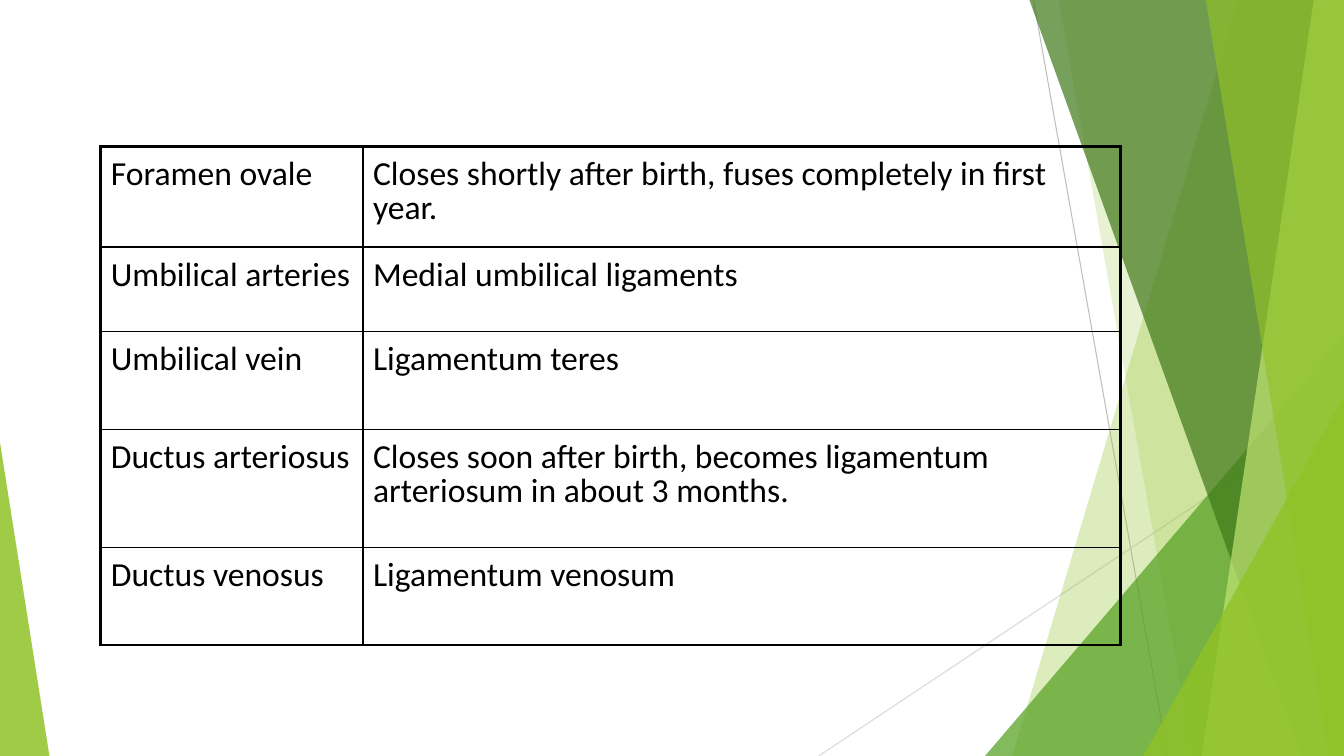
from lxml.etree import SubElement
from pptx import Presentation
from pptx.dml.color import RGBColor
from pptx.enum.shapes import MSO_CONNECTOR, MSO_SHAPE
from pptx.oxml import parse_xml
from pptx.oxml.ns import nsdecls, qn
from pptx.util import Inches, Pt

BLACK = RGBColor(0x00, 0x00, 0x00)
SILVER = RGBColor(0xBF, 0xBF, 0xBF)
PALE_GRAY = RGBColor(0xD9, 0xD9, 0xD9)
LEAF = RGBColor(0x90, 0xC2, 0x26)
GRASS = RGBColor(0x54, 0xA0, 0x21)
FOREST = RGBColor(0x3F, 0x78, 0x19)
LIME = RGBColor(0xC0, 0xE4, 0x74)

SLIDE_WIDTH, SLIDE_HEIGHT = 13.33, 7.5
OUTER_BORDER, INNER_BORDER = 2.21, 0.96

REMNANTS = [
    ("Foramen ovale", "Closes shortly after birth, fuses completely in first year."),
    ("Umbilical arteries", "Medial umbilical ligaments"),
    ("Umbilical vein", "Ligamentum teres"),
    ("Ductus arteriosus",
     "Closes soon after birth, becomes ligamentum arteriosum in about 3 months."),
    ("Ductus venosus", "Ligamentum venosum"),
]
COLUMN_WIDTHS = [2.6, 7.51]
ROW_HEIGHTS = [1, 0.84, 0.97, 1.17, 0.97]


def paint(shape, color, opacity):
    """Give a shape a translucent fill without outline or shadow."""
    shape.shadow.inherit = False
    shape.line.fill.background()
    shape.fill.solid()
    shape.fill.fore_color.rgb = color
    color_element = shape.fill._xPr.find(qn("a:solidFill"))[0]
    SubElement(color_element, qn("a:alpha")).set("val", str(opacity * 1000))


def add_hairline(slide, start, end, color):
    """Draw a thin straight line between two points."""
    points = [Inches(value) for value in (*start, *end)]
    connector = slide.shapes.add_connector(MSO_CONNECTOR.STRAIGHT, *points)
    connector.line.color.rgb = color
    connector.line.width = Pt(0.75)
    SubElement(connector._element.spPr, qn("a:effectLst"))


def add_facet(slide, corners, color, opacity):
    """Draw a translucent polygon through the given corners."""
    points = [(Inches(x), Inches(y)) for x, y in corners]
    builder = slide.shapes.build_freeform(*points[0])
    builder.add_line_segments(points[1:], close=True)
    paint(builder.convert_to_shape(), color, opacity)


def add_wedge(slide, left, top, width, height, apex, color, opacity):
    """Draw a translucent triangle with its apex at a share of its width."""
    shape = slide.shapes.add_shape(
        MSO_SHAPE.ISOSCELES_TRIANGLE,
        Inches(left), Inches(top), Inches(width), Inches(height))
    shape.adjustments[0] = apex
    paint(shape, color, opacity)


def draw_right_facets(slide, left, top, width, height):
    """Layer the lines and green facets against the right edge of the box."""
    right, bottom = left + width, top + height

    def veil(top_offset, bottom_offset, color, opacity):
        """Draw a facet that reaches from its slanted left side to the edge."""
        corners = [(left + top_offset, top), (right, top),
                   (right, bottom), (left + bottom_offset, bottom)]
        add_facet(slide, corners, color, opacity)

    def corner_wedge(wedge_width, wedge_height, color, opacity):
        """Draw a wedge in the lower right corner."""
        add_wedge(slide, right - wedge_width, bottom - wedge_height,
                  wedge_width, wedge_height, 1, color, opacity)

    add_hairline(slide, (left + 2.13, top), (left + 3.46, bottom), SILVER)
    add_hairline(slide, (right, top + 4.03), (left, bottom), PALE_GRAY)
    veil(4.16, 1.92, LEAF, 30)
    veil(2.38, 3.71, LEAF, 20)
    corner_wedge(3.56, 4.17, GRASS, 72)
    veil(2.09, 4.79, FOREST, 70)
    veil(4.91, 3.8, LIME, 70)
    veil(3.84, 5.06, LEAF, 65)
    corner_wedge(1.99, 3.57, LEAF, 80)


def write_text(frame, text, *, size=24, font="Calibri", color=BLACK,
               line_spacing=0.83, space_before=5.6):
    """Write one formatted paragraph into a text frame."""
    paragraph = frame.paragraphs[0]
    paragraph.line_spacing = line_spacing
    paragraph.space_before = Pt(space_before)
    run = paragraph.add_run()
    run.text = text
    run.font.size = Pt(size)
    run.font.name = font
    run.font.color.rgb = color


def set_borders(cell, widths):
    """Set the left, right, top and bottom borders of a cell in points."""
    properties = cell._tc.get_or_add_tcPr()
    for index, (side, width) in enumerate(zip("LRTB", widths)):
        properties.insert(index, parse_xml(
            f'<a:ln{side} {nsdecls("a")} w="{Pt(width)}"><a:solidFill>'
            f'<a:srgbClr val="{BLACK}"/></a:solidFill></a:ln{side}>'))


def draw_remnants_table(slide, left, top, width, height):
    """Fill the box with the table of fetal structures and their remnants."""
    table = slide.shapes.add_table(
        len(REMNANTS), len(COLUMN_WIDTHS),
        Inches(left), Inches(top), Inches(width), Inches(height)).table
    table.first_row = False
    table.horz_banding = False
    for column, column_width in zip(table.columns, COLUMN_WIDTHS):
        column.width = Inches(column_width)
    last_row, last_column = len(REMNANTS) - 1, len(COLUMN_WIDTHS) - 1
    for row_index, texts in enumerate(REMNANTS):
        table.rows[row_index].height = Inches(ROW_HEIGHTS[row_index])
        for column_index, text in enumerate(texts):
            cell = table.cell(row_index, column_index)
            cell.margin_left = cell.margin_right = Inches(0.1)
            cell.margin_top, cell.margin_bottom = Inches(0.12), Inches(0.05)
            cell.fill.background()
            write_text(cell.text_frame, text)
            on_outside = (column_index == 0, column_index == last_column,
                          row_index == 0, row_index == last_row)
            set_borders(cell, [OUTER_BORDER if outside else INNER_BORDER
                               for outside in on_outside])


def main():
    """Build the slide and save the presentation."""
    presentation = Presentation()
    presentation.slide_width = Inches(SLIDE_WIDTH)
    presentation.slide_height = Inches(SLIDE_HEIGHT)
    slide = presentation.slides.add_slide(presentation.slide_layouts[6])
    draw_right_facets(slide, 8.12, 0, SLIDE_WIDTH - 8.12, SLIDE_HEIGHT)
    add_wedge(slide, 0, SLIDE_HEIGHT - 3.11, 0.49, 3.11, 0, LEAF, 85)
    draw_remnants_table(slide, 1, 1.45, sum(COLUMN_WIDTHS), sum(ROW_HEIGHTS))
    presentation.save("out.pptx")


if __name__ == "__main__":
    main()
